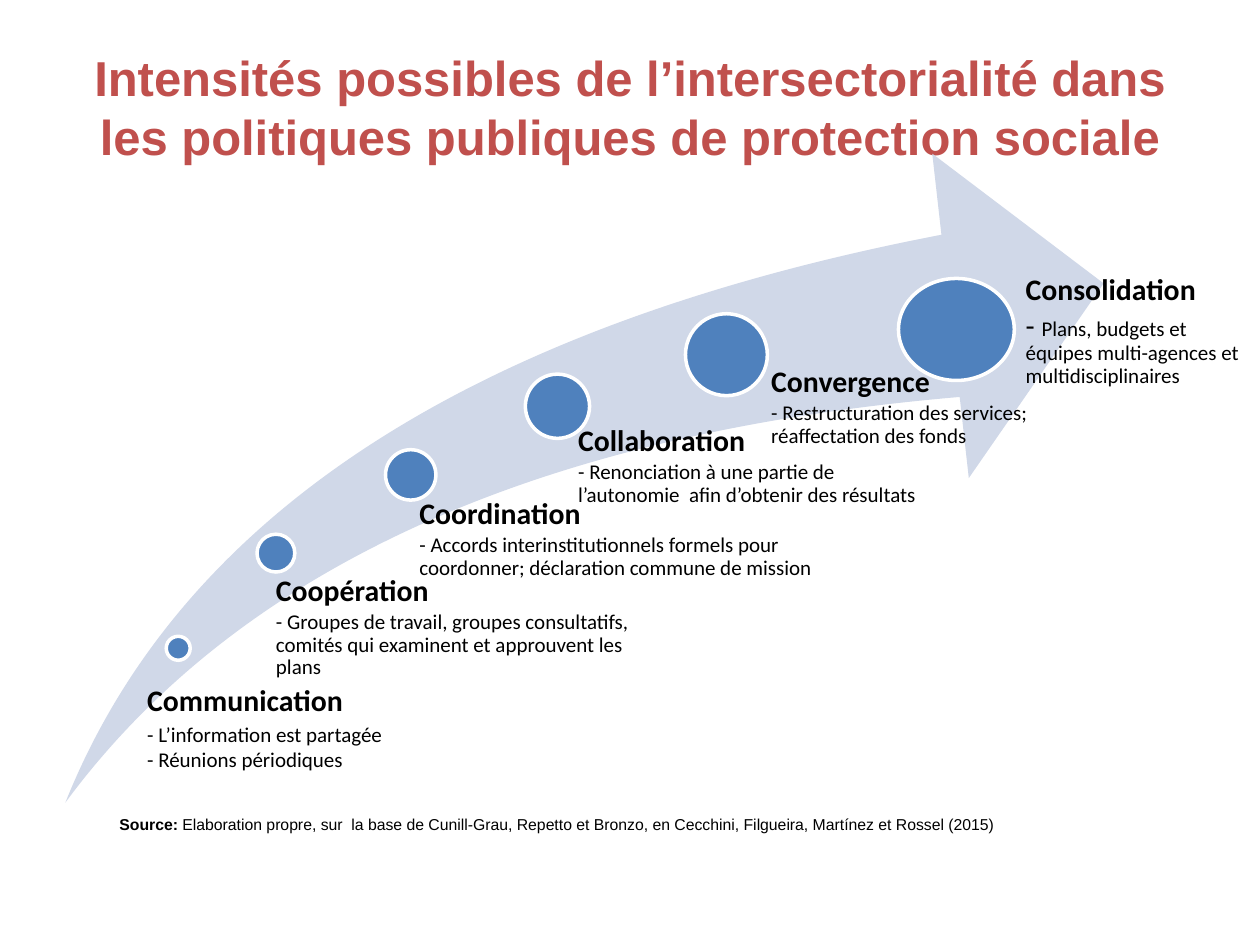
from pptx import Presentation
from pptx.dml.color import RGBColor
from pptx.enum import shapes, text
from pptx.util import Pt

RED = RGBColor(0xC0, 0x50, 0x4D)
BLUE = RGBColor(0x4F, 0x81, 0xBD)
PALE_BLUE = RGBColor(0xD0, 0xD8, 0xE8)
WHITE = RGBColor(0xFF, 0xFF, 0xFF)
BLACK = RGBColor(0, 0, 0)

TITLE = ("Intensités possibles de l’intersectorialité dans "
         "les politiques publiques de protection sociale")
SOURCE = ("Source: ", "Elaboration propre, sur  la base de Cunill-Grau, Repetto et Bronzo, "
          "en Cecchini, Filgueira, Martínez et Rossel (2015)")

# Stage, details, circle box, label box, label left inset
STAGES = [
    ("Communication", ["- L’information est partagée", "- Réunions périodiques"],
     (95, 363.6, 13.7, 13.7), (77, 391.7, 217.4, 59), 7.2),
    ("Coopération", ["- Groupes de travail, groupes consultatifs, comités qui examinent "
                     "et approuvent les plans"],
     (146.9, 305.3, 21.6, 21.6), (146.2, 329, 228.2, 110.2), 11.5),
    ("Coordination", ["- Accords interinstitutionnels formels pour coordonner; "
                      "déclaration commune de mission"],
     (220.3, 257, 28.8, 28.8), (224.6, 285.1, 244.8, 115.9), 15.1),
    ("Collaboration", ["- Renonciation à une partie de l’autonomie  afin d’obtenir "
                       "des résultats"],
     (300.2, 213.8, 36.7, 36.7), (311, 243.4, 226.8, 67.7), 19.4),
    ("Convergence", ["- Restructuration des services; réaffectation des fonds"],
     (391.7, 179.3, 46.8, 46.8), (416.2, 209.5, 203.8, 79.9), 24.5),
    ("Consolidation", [("- ", "Plans, budgets et équipes multi-agences et multidisciplinaires")],
     (513.4, 159.1, 66.2, 58.3), (561.6, 157, 154.8, 160.6), 24.5),
]


def points(box):
    return [Pt(length) for length in box]


def format_run(run, size, name="Calibri", bold=False, color=BLACK):
    run.font.size = Pt(size)
    run.font.name = name
    run.font.bold = bold
    run.font.color.rgb = color


def add_run(paragraph, content, size, **style):
    run = paragraph.add_run()
    run.text = content
    format_run(run, size, **style)


def add_filled_shape(slide, kind, box, fill):
    shape = slide.shapes.add_shape(kind, *points(box))
    shape.shadow.inherit = False
    shape.fill.solid()
    shape.fill.fore_color.rgb = fill
    shape.line.fill.background()
    return shape


def add_circle(slide, box):
    circle = add_filled_shape(slide, shapes.MSO_SHAPE.OVAL, box, BLUE)
    circle.line.color.rgb = WHITE
    circle.line.width = Pt(2)


def add_label(slide, heading, details, box, inset):
    frame = slide.shapes.add_textbox(*points(box)).text_frame
    frame.word_wrap = True
    frame.margin_left = Pt(inset)
    frame.margin_top = frame.margin_right = frame.margin_bottom = 0
    paragraph = frame.paragraphs[0]
    paragraph.line_spacing = 0.9
    paragraph.space_after = Pt(2)
    add_run(paragraph, heading, 17, bold=True)
    for detail in details:
        paragraph = frame.add_paragraph()
        paragraph.line_spacing = 0.9 if len(details) == 1 else 1.0
        if isinstance(detail, tuple):
            dash, detail = detail
            add_run(paragraph, dash, 17)
        add_run(paragraph, detail, 12)


presentation = Presentation()
presentation.slide_width, presentation.slide_height = Pt(720), Pt(540)
slide = presentation.slides.add_slide(presentation.slide_layouts[5])

# Title
title = slide.shapes.title
title.left, title.top, title.width, title.height = points((36, 15.8, 648, 90))
title.text_frame.text = TITLE
paragraph = title.text_frame.paragraphs[0]
paragraph.alignment = text.PP_ALIGN.CENTER
format_run(paragraph.runs[0], 28, name="Arial", bold=True, color=RED)

# Source line
frame = slide.shapes.add_textbox(*points((61.2, 462.2, 722.9, 18))).text_frame
frame.word_wrap = True
frame.vertical_anchor = text.MSO_ANCHOR.MIDDLE
paragraph = frame.paragraphs[0]
paragraph.alignment = text.PP_ALIGN.JUSTIFY
for content, bold in zip(SOURCE, (True, False)):
    add_run(paragraph, content, 9, name="Arial", bold=bold)

# Rising arrow
arrow = add_filled_shape(slide, shapes.MSO_SHAPE.SWOOSH_ARROW,
                         (37.4, 87.8, 593.3, 370.8), PALE_BLUE)
arrow.adjustments[0] = arrow.adjustments[1] = 0.25

# Stages along the arrow
for heading, details, circle_box, label_box, inset in STAGES:
    add_circle(slide, circle_box)
    add_label(slide, heading, details, label_box, inset)

presentation.save("out.pptx")
